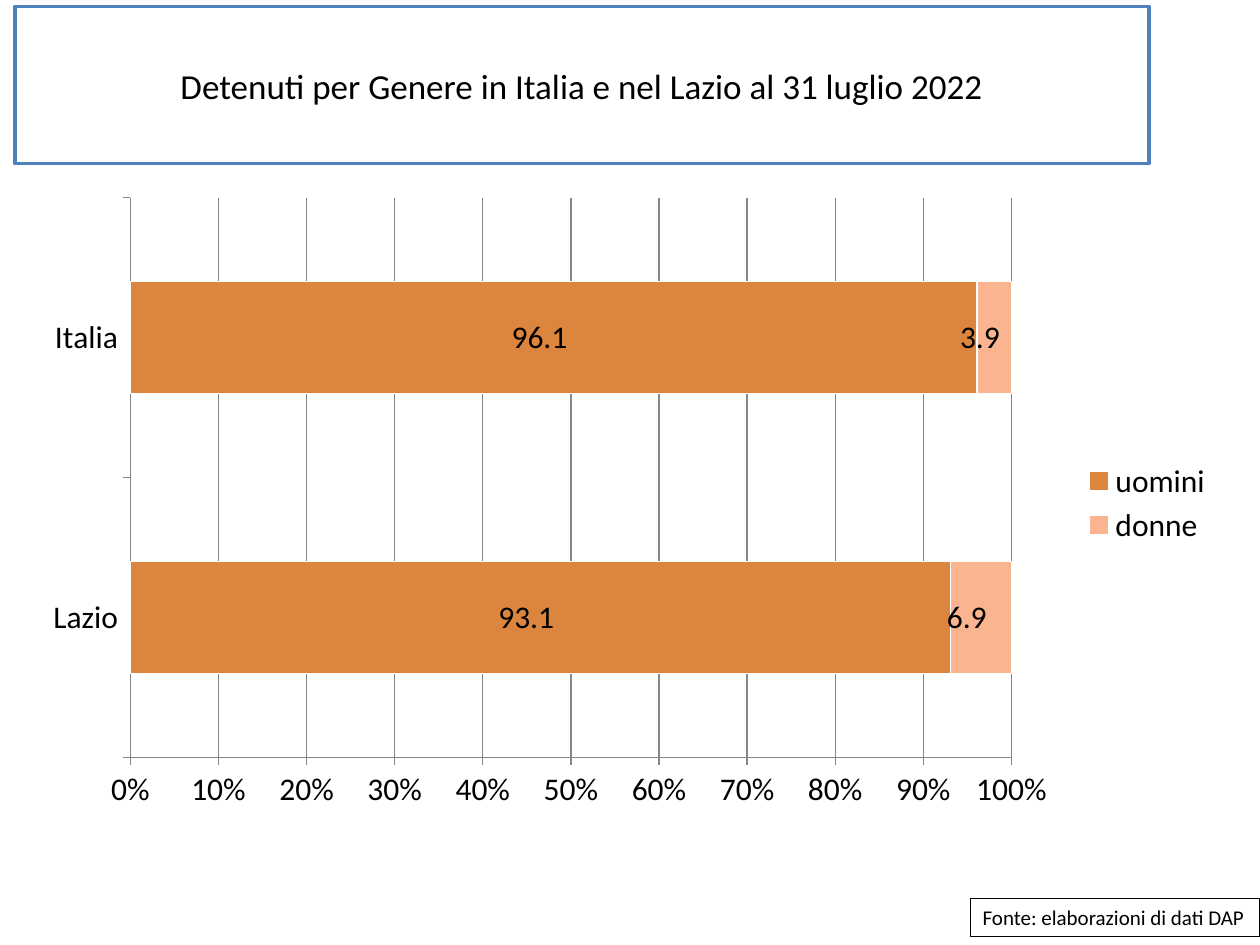
from lxml.etree import SubElement
from pptx import Presentation
from pptx.chart.data import CategoryChartData
from pptx.dml.color import RGBColor
from pptx.enum.chart import XL_CHART_TYPE, XL_LABEL_POSITION, XL_LEGEND_POSITION, XL_TICK_MARK
from pptx.enum.shapes import MSO_SHAPE
from pptx.enum.text import MSO_ANCHOR, PP_ALIGN
from pptx.oxml.ns import qn
from pptx.util import Cm, Pt

COLORS = {
    "text": "000000",
    "paper": "FFFFFF",
    "title_border": "4F81BD",
    "grid": "868686",
    "uomini": "DC853E",
    "donne": "FAB490",
}
FONT = "Calibri"
VALUE_FORMAT = "#,##0.0\\ _€_-"


def color(name):
    return RGBColor.from_string(COLORS[name])


def style_font(font, size):
    font.name = FONT
    font.size = Pt(size)
    font.color.rgb = color("text")


def write_text(frame, text, size, align=PP_ALIGN.LEFT, wrap=True):
    frame.word_wrap = wrap
    frame.vertical_anchor = MSO_ANCHOR.MIDDLE
    paragraph = frame.paragraphs[0]
    paragraph.alignment = align
    run = paragraph.add_run()
    run.text = text
    style_font(run.font, size)


class SlideBuilder:
    def __init__(self, slide):
        self.slide = slide

    def framed_text(self, box, text, border, border_width, **text_format):
        frame = self.slide.shapes.add_shape(MSO_SHAPE.RECTANGLE, *map(Cm, box))
        frame.shadow.inherit = False
        frame.fill.solid()
        frame.fill.fore_color.rgb = color("paper")
        frame.line.color.rgb = color(border)
        frame.line.width = Pt(border_width)
        write_text(frame.text_frame, text, **text_format)

    def share_chart(self, box, categories, shares, plot_area, size):
        """Add 100% stacked bars; plot_area holds x, y, w, h as chart fractions."""
        data = CategoryChartData(number_format=VALUE_FORMAT)
        data.categories = categories
        for name, values in shares.items():
            data.add_series(name, values)
        chart = self.slide.shapes.add_chart(
            XL_CHART_TYPE.BAR_STACKED_100, *map(Cm, box), data).chart
        style_font(chart.font, size)
        chart.has_title = False
        chart.has_legend = True
        chart.legend.position = XL_LEGEND_POSITION.RIGHT
        chart.legend.include_in_layout = False

        bars = chart.plots[0]
        bars.gap_width = 150
        bars.overlap = 100
        bars.vary_by_categories = False
        for series in bars.series:
            series.format.fill.solid()
            series.format.fill.fore_color.rgb = color(series.name)
            series.format.line.color.rgb = color("paper")
            series.format.line.width = Pt(0.75)
            labels = series.data_labels
            labels.show_value = True
            labels.position = XL_LABEL_POSITION.CENTER
            labels.number_format = VALUE_FORMAT
            labels.number_format_is_linked = False
            style_font(labels.font, size)

        for axis in (chart.category_axis, chart.value_axis):
            axis.major_tick_mark = XL_TICK_MARK.OUTSIDE
            axis.minor_tick_mark = XL_TICK_MARK.NONE
            axis.format.line.color.rgb = color("grid")
            style_font(axis.tick_labels.font, size)
        percent = chart.value_axis
        percent.minimum_scale = 0
        percent.has_major_gridlines = True
        percent.major_gridlines.format.line.color.rgb = color("grid")
        percent.tick_labels.number_format = "0%"
        percent.tick_labels.number_format_is_linked = False
        self.place_plot(chart, plot_area)

    def place_plot(self, chart, plot_area):
        plot = chart.plots[0]._element.getparent()
        layout = plot.find(qn("c:layout"))
        if layout is None:
            layout = SubElement(plot, qn("c:layout"))
            plot.insert(0, layout)
        manual = SubElement(layout, qn("c:manualLayout"))
        settings = [("layoutTarget", "inner"), ("xMode", "edge"), ("yMode", "edge")]
        settings += zip("xywh", plot_area)
        for tag, value in settings:
            SubElement(manual, qn(f"c:{tag}")).set("val", str(value))


def main():
    deck = Presentation()
    deck.slide_width, deck.slide_height = Cm(25.4), Cm(19.05)
    builder = SlideBuilder(deck.slides.add_slide(deck.slide_layouts[6]))
    builder.framed_text(
        (0.3, 0.13, 22.86, 3.17),
        "Detenuti per Genere in Italia e nel Lazio al 31 luglio 2022",
        "title_border", 2, size=20, align=PP_ALIGN.CENTER)
    builder.share_chart(
        (0.71, 3.73, 24, 12.83), ["Lazio", "Italia"],
        {"uomini": (93.1, 96.1), "donne": (6.9, 3.9)},
        plot_area=(0.08, 0.02, 0.74, 0.88), size=18)
    builder.framed_text(
        (19.56, 18.11, 5.84, 0.77), "Fonte: elaborazioni di dati DAP",
        "text", 0.75, size=12, wrap=False)
    deck.save("out.pptx")


if __name__ == "__main__":
    main()
